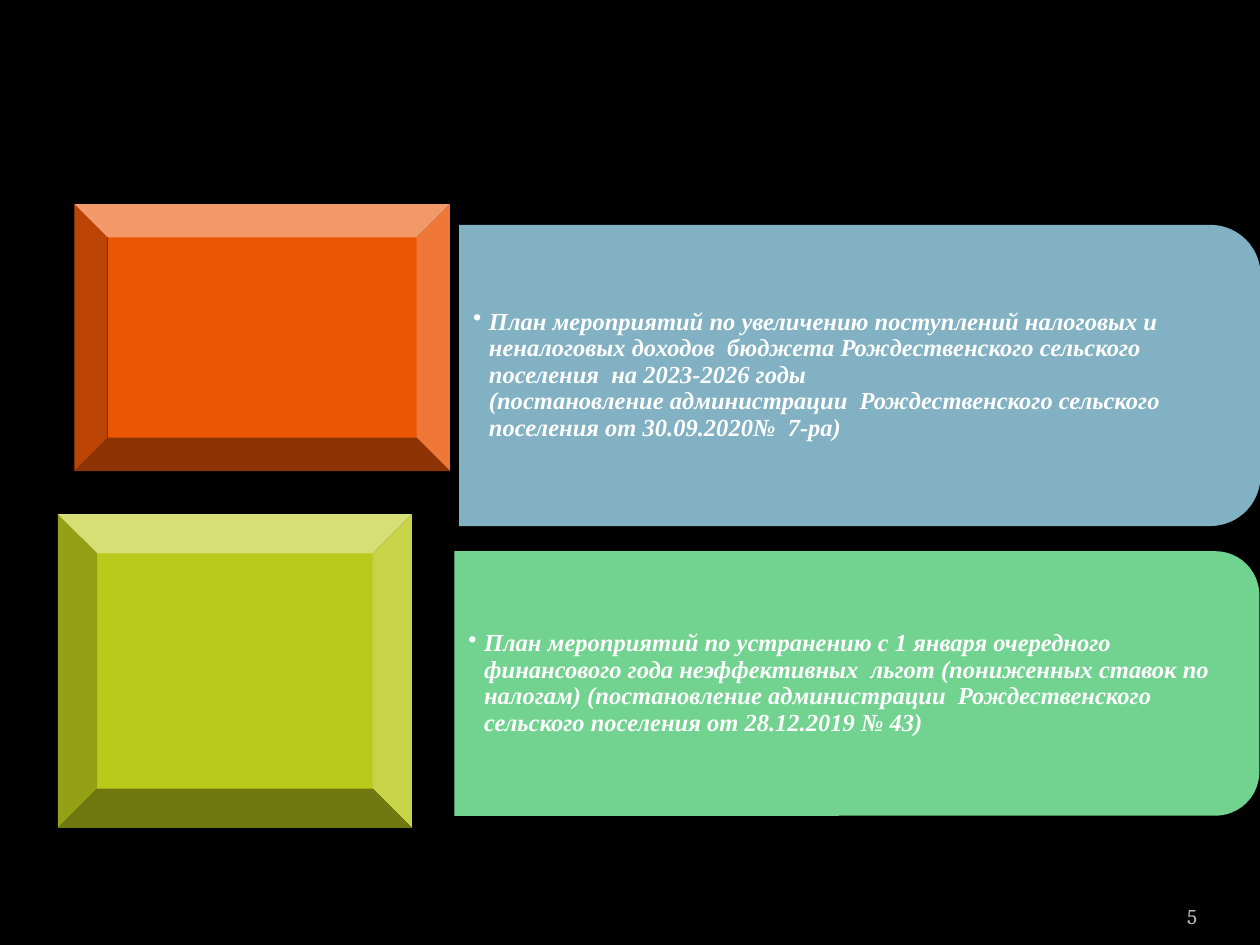
from lxml import etree
from pptx import Presentation
from pptx.dml.color import RGBColor
from pptx.enum import shapes, text
from pptx.oxml.ns import qn
from pptx.util import Pt

BLACK = RGBColor(0x00, 0x00, 0x00)
WHITE = RGBColor(0xFF, 0xFF, 0xFF)
GREY = RGBColor(0xBD, 0xBD, 0xBD)
ORANGE = RGBColor(0xEB, 0x56, 0x05)
BLUE = RGBColor(0x90, 0xC5, 0xD8)
LIME = RGBColor(0xB9, 0xCA, 0x1A)
GREEN = RGBColor(0x7E, 0xEA, 0x9F)

CORNER_RATIO = 0.16667
CORNER_INSET = 0.29

PLANS = [
    {
        "tile": (42.5, 116.6, 214.6, 152.6),
        "tile_color": ORANGE,
        "panel": (262.4, 128.5, 457.9, 172.1),
        "panel_color": BLUE,
        "lines": [
            "План мероприятий по увеличению поступлений налоговых и неналоговых доходов  "
            "бюджета Рождественского сельского поселения  на 2023-2026 годы ",
            "(постановление администрации  Рождественского сельского поселения "
            "от 30.09.2020№  7-ра)",
        ],
    },
    {
        "tile": (33.1, 293.8, 202.3, 179.3),
        "tile_color": LIME,
        "panel": (259.6, 315, 460.1, 151.2),
        "panel_color": GREEN,
        "lines": [
            "План мероприятий по устранению с 1 января очередного финансового года "
            "неэффективных  льгот (пониженных ставок по налогам) (постановление "
            "администрации  Рождественского сельского поселения от 28.12.2019 № 43)",
        ],
    },
]


def add_quarter_turned(slide, preset, box, color):
    """Add a preset shape turned by 90 degrees that covers the given box."""
    left, top, width, height = box
    shift = (width - height) / 2
    turned = slide.shapes.add_shape(
        preset, Pt(left + shift), Pt(top - shift), Pt(height), Pt(width))
    turned.rotation = 90
    turned.shadow.inherit = False
    turned.fill.solid()
    turned.fill.fore_color.rgb = color
    turned.line.fill.background()
    return turned


def add_text_frame(slide, box, margins, anchor):
    """Add a wrapping text box and return its frame."""
    frame = slide.shapes.add_textbox(*map(Pt, box)).text_frame
    frame.word_wrap = True
    frame.vertical_anchor = anchor
    (frame.margin_left, frame.margin_top,
     frame.margin_right, frame.margin_bottom) = map(Pt, margins)
    return frame


def add_run(paragraph, wording, font_name, size, color, emphasis=False):
    """Add one formatted run to a paragraph."""
    run = paragraph.add_run()
    run.text = wording
    run.font.name = font_name
    run.font.size = Pt(size)
    run.font.color.rgb = color
    run.font.bold = run.font.italic = emphasis


def add_tile(slide, box, color):
    """Place the bevelled tile in its box."""
    add_quarter_turned(slide, shapes.MSO_SHAPE.BEVEL, box, color)


def add_panel(slide, box, color, lines):
    """Place the translucent panel in its box with a bulleted plan on it."""
    panel = add_quarter_turned(
        slide, shapes.MSO_SHAPE.ROUND_2_SAME_RECTANGLE, box, color)
    panel.adjustments[0] = CORNER_RATIO
    tint = panel.fill._xPr.find(qn("a:solidFill"))[0]
    etree.SubElement(tint, qn("a:alpha"), val="90000")

    left, top, width, height = box
    inset = height * CORNER_RATIO * CORNER_INSET
    frame = add_text_frame(
        slide, (left, top + inset, width - inset, height - 2 * inset),
        (8, 0.7, 0.7, 0.7), text.MSO_ANCHOR.MIDDLE)
    plan = frame.paragraphs[0]
    plan.level = 1
    plan.line_spacing = 0.9
    properties = plan._p.get_or_add_pPr()
    properties.set("marL", str(Pt(9)))
    properties.set("indent", str(-Pt(9)))
    etree.SubElement(properties, qn("a:buChar"), char="•")
    for index, line in enumerate(lines):
        if index:
            plan.add_line_break()
        add_run(plan, line, "Times New Roman", 14, WHITE, emphasis=True)


def add_page_number(slide, box):
    """Place the page number at the bottom right of its box."""
    frame = add_text_frame(slide, box, (0, 3.6, 0, 3.6), text.MSO_ANCHOR.BOTTOM)
    number = frame.paragraphs[0]
    number.alignment = text.PP_ALIGN.RIGHT
    add_run(number, "5", "Cambria", 12, GREY)


def main():
    """Build the slide and save it."""
    deck = Presentation()
    deck.slide_width, deck.slide_height = Pt(720), Pt(540)
    slide = deck.slides.add_slide(deck.slide_layouts[6])
    slide.background.fill.solid()
    slide.background.fill.fore_color.rgb = BLACK

    add_page_number(slide, (624.2, 505.4, 59.8, 28.8))
    for plan in PLANS:
        add_tile(slide, plan["tile"], plan["tile_color"])
        add_panel(slide, plan["panel"], plan["panel_color"], plan["lines"])
    deck.save("out.pptx")


if __name__ == "__main__":
    main()
